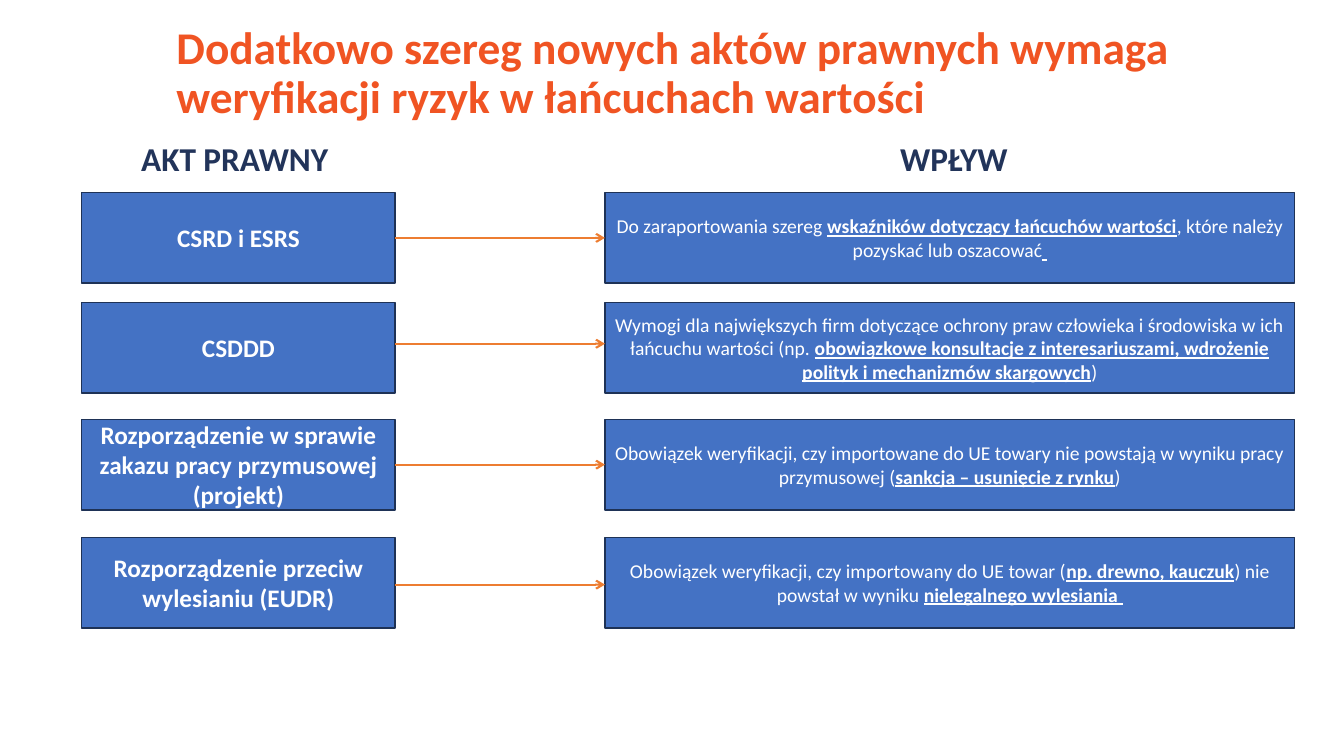
"""Build a slide that links new legal acts to their impact on value chains."""
from lxml import etree
from pptx import Presentation
from pptx.dml.color import RGBColor
from pptx.enum import shapes, text
from pptx.oxml import ns
from pptx.util import Inches, Pt

TITLE = "Dodatkowo szereg nowych aktów prawnych wymaga weryfikacji ryzyk w łańcuchach wartości"
HEADS = ("AKT PRAWNY", "WPŁYW")
ROWS = [
    (1.91, 2.36, "CSRD i ESRS", (
        "Do zaraportowania szereg ", "wskaźników dotyczący łańcuchów wartości",
        ", które należy pozyskać lub oszacować", " ")),
    (3.0, 3.41, "CSDDD", (
        "Wymogi dla największych firm dotyczące ochrony praw człowieka i środowiska"
        " w ich łańcuchu wartości (np. ",
        "obowiązkowe konsultacje z interesariuszami, wdrożenie polityk i mechanizmów skargowych",
        ")")),
    (4.16, 4.61, "Rozporządzenie w sprawie zakazu pracy przymusowej (projekt)", (
        "Obowiązek weryfikacji, czy importowane do UE towary nie powstają"
        " w wyniku pracy przymusowej (",
        "sankcja – usunięcie z rynku", ")")),
    (5.33, 5.8, "Rozporządzenie przeciw wylesianiu (EUDR)", (
        "Obowiązek weryfikacji, czy importowany do UE towar (", "np. drewno, kauczuk",
        ") nie powstał w wyniku ", "nielegalnego wylesiania ")),
]
THEME = {
    "font": "Calibri", "title": "F05423", "head": "22345A", "fill": "4472C4",
    "edge": "1E3256", "text": "FFFFFF", "arrow": "ED7D31",
    "title_pt": 32.4, "head_pt": 23.8, "act_pt": 18, "note_pt": 14,
}
ACT = (0.81, 3.11)
NOTE = (6, 6.84)
TALL = 0.9


def color(key):
    return RGBColor.from_string(THEME[key])


def place(shape, left, top, width, height):
    spots = {"left": left, "top": top, "width": width, "height": height}
    for name, value in spots.items():
        setattr(shape, name, Inches(value))


def write(shape, runs, role, tint, align, anchor, **para):
    frame = shape.text_frame
    form = {"word_wrap": True, "auto_size": text.MSO_AUTO_SIZE.NONE, "vertical_anchor": anchor}
    for name, value in form.items():
        setattr(frame, name, value)
    line = frame.paragraphs[0]
    for name, value in {"alignment": align, "space_before": Pt(0), **para}.items():
        setattr(line, name, value)
    for words, bold, under in runs:
        run = line.add_run()
        run.text = words
        look = {"name": THEME["font"], "size": Pt(THEME[role]), "bold": bold, "underline": under}
        for name, value in look.items():
            setattr(run.font, name, value)
        run.font.color.rgb = color(tint)


def head(shape, left, words):
    place(shape, left, 1.43, 2.33, 0.41)
    props = shape.text_frame.paragraphs[0]._p.get_or_add_pPr()
    props.set("marL", "0")
    props.set("indent", "0")
    etree.SubElement(props, ns.qn("a:buNone"))
    write(shape, [(words, True, False)], "head_pt", "head",
          text.PP_ALIGN.LEFT, text.MSO_ANCHOR.TOP, line_spacing=0.7)


def box(slide, column, top, runs, role):
    left, width = column
    rect = slide.shapes.add_shape(
        shapes.MSO_SHAPE.RECTANGLE, *map(Inches, (left, top, width, TALL)))
    rect.shadow.inherit = False
    rect.fill.solid()
    rect.fill.fore_color.rgb = color("fill")
    rect.line.color.rgb = color("edge")
    rect.line.width = Pt(1)
    write(rect, runs, role, "text", text.PP_ALIGN.CENTER, text.MSO_ANCHOR.MIDDLE)


def arrow(slide, level):
    start = sum(ACT)
    link = slide.shapes.add_connector(
        shapes.MSO_CONNECTOR.STRAIGHT, *map(Inches, (start, level, NOTE[0], level)))
    link.line.color.rgb = color("arrow")
    link.line.width = Pt(1.5)
    etree.SubElement(link.line._get_or_add_ln(), ns.qn("a:tailEnd"), type="arrow")
    etree.SubElement(link._element.spPr, ns.qn("a:effectLst"))


def main():
    deck = Presentation()
    deck.slide_width, deck.slide_height = Inches(13.33), Inches(7.5)
    slide = deck.slides.add_slide(deck.slide_layouts[1])
    title, body = slide.placeholders
    place(title, 1.65, 0.2, 11.31, 1.08)
    write(title, [(TITLE, True, False)], "title_pt", "title",
          text.PP_ALIGN.LEFT, text.MSO_ANCHOR.MIDDLE, line_spacing=0.9)
    head(body, 1.3, HEADS[0])
    head(slide.shapes.add_textbox(0, 0, 0, 0), 8.83, HEADS[1])
    for top, level, act, parts in ROWS:
        box(slide, ACT, top, [(act, True, False)], "act_pt")
        marks = [(part, i % 2 == 1, i % 2 == 1) for i, part in enumerate(parts)]
        box(slide, NOTE, top, marks, "note_pt")
        arrow(slide, level)
    deck.save("out.pptx")


if __name__ == "__main__":
    main()
